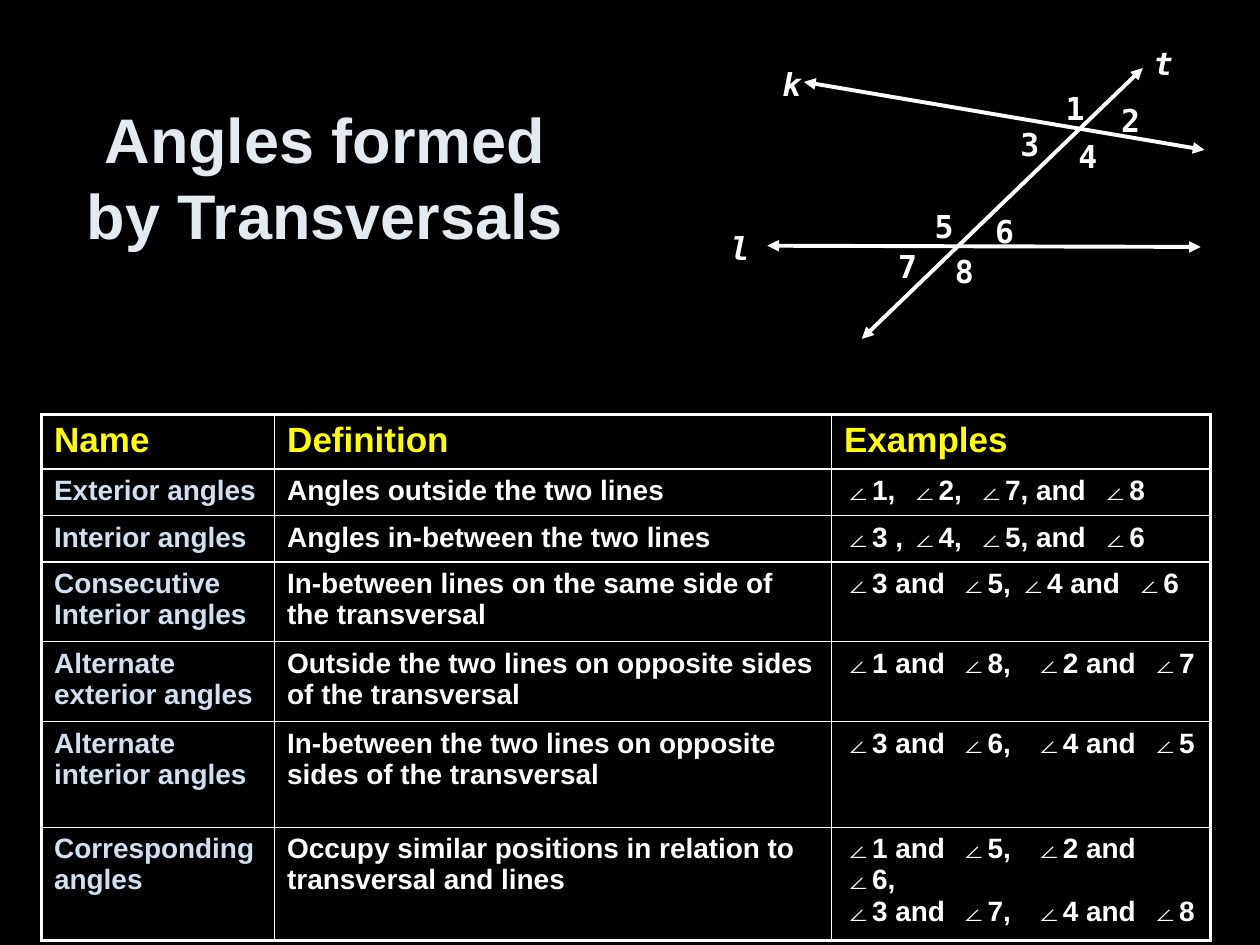
from dataclasses import dataclass

from lxml.etree import SubElement
from pptx import Presentation
from pptx.dml.color import RGBColor
from pptx.enum.shapes import MSO_CONNECTOR as Connector
from pptx.enum.text import MSO_ANCHOR as Anchor, MSO_AUTO_SIZE as AutoSize, PP_ALIGN as Align
from pptx.oxml.ns import qn
from pptx.util import Pt

BLACK = RGBColor(0x00, 0x00, 0x00)
WHITE = RGBColor(0xFF, 0xFF, 0xFF)
YELLOW = RGBColor(0xFF, 0xFF, 0x00)
PALE_BLUE = RGBColor(0xD1, 0xE0, 0xF0)
TITLE_GREY = RGBColor(0xE3, 0xEB, 0xF1)

THICK, THIN = 2.25, 1


@dataclass(frozen=True)
class Line:
    x1: float
    y1: float
    x2: float
    y2: float


@dataclass(frozen=True)
class Label:
    text: str
    left: float
    top: float
    width: float = 22.32
    italic: bool = False


@dataclass(frozen=True)
class AngleRow:
    name: str
    definition: str
    examples: str
    height: float
    tabs: tuple = ()


LINES = (
    Line(459.36, 46.8, 688.32, 85.68),
    Line(438.48, 140.4, 686.16, 141.12),
    Line(653.04, 38.88, 492.48, 193.68),
)

LABELS = (
    Label("t", 652.32, 21.6, 20.16, True),
    Label("k", 439.92, 33.84, 22.32, True),
    Label("l", 410.4, 127.44, 18.72, True),
    Label("1", 601.92, 47.52),
    Label("2", 633.6, 54),
    Label("3", 576, 67.68),
    Label("4", 609.12, 74.88),
    Label("5", 527.04, 114.48),
    Label("6", 561.6, 117.36),
    Label("7", 506.16, 137.52),
    Label("8", 538.56, 140.4),
)

COLUMN_WIDTHS = (133.2, 318.24, 216.72)
LIST_TABS = (38, 76, 147)
PAIR_TABS = (66, 109, 175.5)
CLOSE_PAIR_TABS = (66, 100, 166.5)

ROWS = (
    AngleRow("Name", "Definition", "Examples", 31),
    AngleRow("Exterior angles", "Angles outside the two lines",
             "∠1,\t∠2,\t∠7, and\t∠8", 26.5, LIST_TABS),
    AngleRow("Interior angles", "Angles in-between the two lines",
             "∠3 ,\t∠4,\t∠5, and\t∠6", 26.5, LIST_TABS),
    AngleRow("Consecutive Interior angles",
             "In-between lines on the same side of the transversal",
             "∠3 and\t∠5,\t∠4 and\t∠6", 45.5, CLOSE_PAIR_TABS),
    AngleRow("Alternate exterior angles",
             "Outside the two lines on opposite sides of the transversal",
             "∠1 and\t∠8,\t∠2 and\t∠7", 45.5, PAIR_TABS),
    AngleRow("Alternate interior angles",
             "In-between the two lines on opposite sides of the transversal",
             "∠3 and\t∠6,\t∠4 and\t∠5", 60.5, PAIR_TABS),
    AngleRow("Corresponding angles",
             "Occupy similar positions in relation to transversal and lines",
             "∠1 and\t∠5,\t∠2 and\t∠6,\v∠3 and\t∠7,\t∠4 and\t∠8", 60.5, PAIR_TABS),
)


def apply_formats(target, formats: dict) -> None:
    for name, value in formats.items():
        setattr(target, name, value)


def format_text(frame, color: RGBColor, size: float, font: str = "Arial",
                italic: bool = False) -> None:
    formats = {"name": font, "size": Pt(size), "bold": True, "italic": italic}
    for para in frame.paragraphs:
        for span in para.runs:
            apply_formats(span.font, formats)
            span.font.color.rgb = color


def add_title(page) -> None:
    box = page.shapes.add_textbox(Pt(12.96), Pt(48.96), Pt(345.6), Pt(103.68))
    frame = box.text_frame
    apply_formats(frame, {"word_wrap": True, "vertical_anchor": Anchor.MIDDLE})
    frame.text = "Angles formed\vby Transversals"
    frame.paragraphs[0].alignment = Align.CENTER
    format_text(frame, TITLE_GREY, 36)


def add_arrow(shapes, line: Line) -> None:
    """Draw a line with an arrowhead at each end."""
    arrow = shapes.add_connector(
        Connector.STRAIGHT, Pt(line.x1), Pt(line.y1), Pt(line.x2), Pt(line.y2))
    arrow.line.color.rgb = WHITE
    arrow.line.width = Pt(THICK)
    stroke = arrow.line._get_or_add_ln()
    for end in ("a:headEnd", "a:tailEnd"):
        SubElement(stroke, qn(end), type="triangle")
    SubElement(arrow._element.spPr, qn("a:effectLst"))


def add_label(shapes, label: Label) -> None:
    box = shapes.add_textbox(Pt(label.left), Pt(label.top), Pt(label.width), Pt(28.8))
    frame = box.text_frame
    apply_formats(frame, {"text": label.text, "word_wrap": False,
                          "auto_size": AutoSize.SHAPE_TO_FIT_TEXT})
    format_text(frame, WHITE, 18, "DejaVu Sans Mono", label.italic)


def add_diagram(page) -> None:
    shapes = page.shapes.add_group_shape().shapes
    for line in LINES:
        add_arrow(shapes, line)
    for label in LABELS:
        add_label(shapes, label)


def set_borders(cell, widths: dict) -> None:
    """Draw the cell borders; they must come before the fill in the XML."""
    properties = cell._tc.get_or_add_tcPr()
    for side, width in widths.items():
        border = SubElement(properties, qn(f"a:{side}"), w=str(Pt(width)))
        fill = SubElement(border, qn("a:solidFill"))
        SubElement(fill, qn("a:srgbClr"), val=str(WHITE))


def set_tabs(para, positions: tuple) -> None:
    tab_list = SubElement(para._p.get_or_add_pPr(), qn("a:tabLst"))
    for position in positions:
        SubElement(tab_list, qn("a:tab"), pos=str(Pt(position)), algn="l")


def add_angle_table(page) -> None:
    last_row, last_column = len(ROWS) - 1, len(COLUMN_WIDTHS) - 1
    table = page.shapes.add_table(
        len(ROWS), len(COLUMN_WIDTHS), Pt(23.76), Pt(236.88),
        Pt(sum(COLUMN_WIDTHS)), Pt(sum(row.height for row in ROWS))).table
    for column, width in zip(table.columns, COLUMN_WIDTHS):
        column.width = Pt(width)
    for i, row in enumerate(ROWS):
        table.rows[i].height = Pt(row.height)
        for j, text in enumerate((row.name, row.definition, row.examples)):
            cell = table.cell(i, j)
            set_borders(cell, {
                "lnL": THICK if j == 0 else THIN,
                "lnR": THICK if j == last_column else THIN,
                "lnT": THICK if i == 0 else THIN,
                "lnB": THICK if i == last_row else THIN,
            })
            cell.fill.solid()
            cell.fill.fore_color.rgb = BLACK
            cell.text = text
            if j == last_column and row.tabs:
                set_tabs(cell.text_frame.paragraphs[0], row.tabs)
            color = YELLOW if i == 0 else PALE_BLUE if j == 0 else WHITE
            format_text(cell.text_frame, color, 20 if i == 0 else 16)


def main() -> None:
    deck = Presentation()
    apply_formats(deck, {"slide_width": Pt(720), "slide_height": Pt(540)})
    page = deck.slides.add_slide(deck.slide_layouts[6])
    page.background.fill.solid()
    page.background.fill.fore_color.rgb = BLACK
    add_title(page)
    add_angle_table(page)
    add_diagram(page)
    deck.save("out.pptx")


if __name__ == "__main__":
    main()
